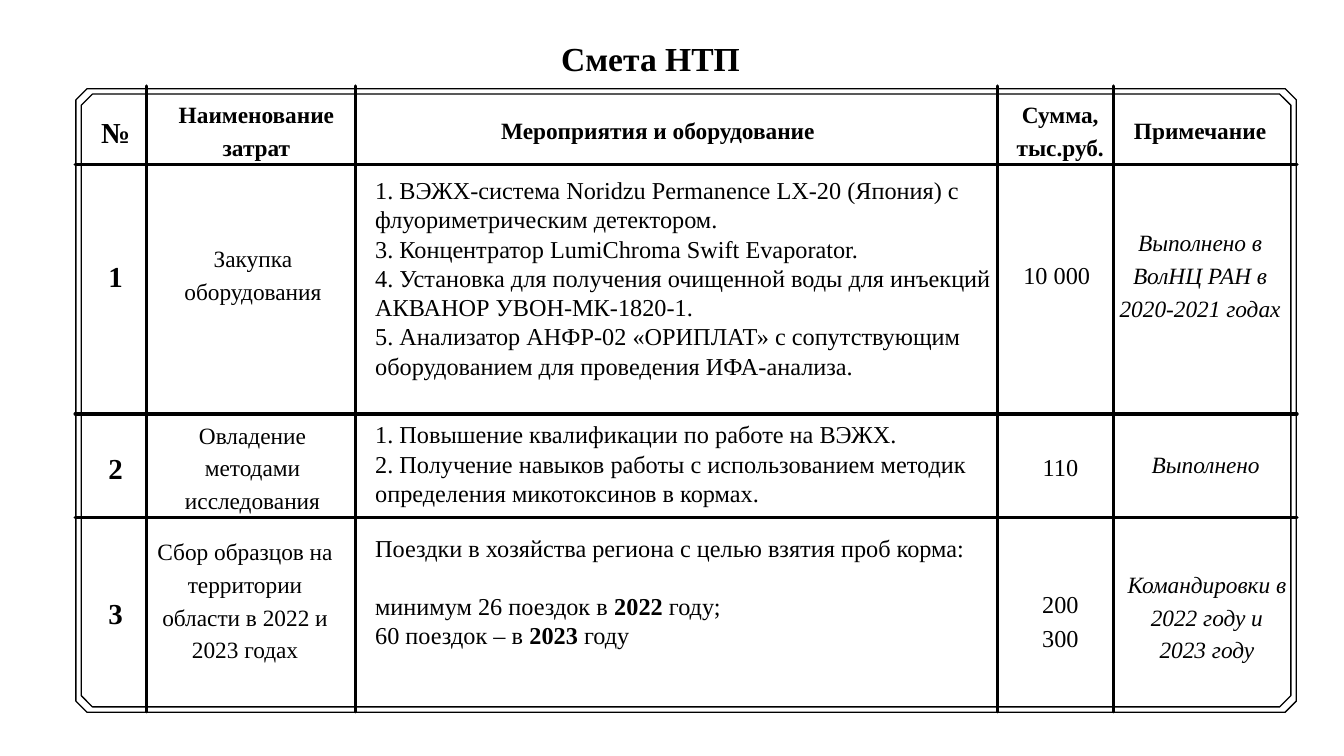
from dataclasses import dataclass
from itertools import pairwise

from lxml import etree
from pptx import Presentation
from pptx import util as u
from pptx.dml.color import RGBColor
from pptx.enum import shapes, text
from pptx.oxml.ns import qn

Pt = u.Pt


@dataclass(frozen=True)
class Theme:
    ink: str = "000000"
    font: str = "Times New Roman"
    title: float = 36
    number: float = 31
    label: float = 25
    body: float = 26
    rule: float = 3.75
    frame: float = 1.4
    plain_table: str = "{2D5ABB26-0587-4C30-8999-92F81FD0307C}"


THEME = Theme()
INK = RGBColor.from_string(THEME.ink)
CENTER, LEFT = text.PP_ALIGN.CENTER, text.PP_ALIGN.LEFT

# Kinds of text: font size, exact line spacing, alignment, bold, italic
STYLES = {
    "title": (THEME.title, 43.4, CENTER, True, False),
    "number": (THEME.number, 43.4, CENTER, True, False),
    "head": (THEME.label, 35, CENTER, True, False),
    "name": (THEME.label, 35, CENTER, False, False),
    "work": (THEME.body, 31.3, LEFT, False, False),
    "sum": (THEME.body, 36.4, CENTER, False, False),
    "note": (THEME.label, 35, CENTER, False, True),
}
BODY_STYLES = ("number", "name", "work", "sum", "note")
HEAD_STYLES = ("number",) + ("head",) * 4

COLUMN_EDGES = (80.6, 157, 381, 1068.5, 1193, 1389.6)
ROW_EDGES = (92.2, 176.4, 443.5, 554.4, 762.5)

# Each cell: paragraphs, then left, top and right insets.
# Text between ** marks is bold; a paragraph after "+" opens one line lower.
ROWS = [
    [
        (["№"], 10, 25, 0),
        (["Наименование затрат"], 14.4, 11, 3),
        (["Мероприятия и оборудование"], 0, 28, 40),
        (["Сумма, тыс.руб."], 14.4, 11, 4),
        (["Примечание"], 8, 28, 19),
    ],
    [
        (["1"], 10, 95, 0),
        (["Закупка оборудования"], 16, 80.6, 12),
        (["1. ВЭЖХ-система Noridzu Permanence LX-20 (Япония) с флуориметрическим детектором.",
          "3. Концентратор LumiChroma Swift Evaporator.",
          "4. Установка для получения очищенной воды для инъекций АКВАНОР УВОН-МК-1820-1.",
          "5. Анализатор АНФР-02 «ОРИПЛАТ» с сопутствующим оборудованием для проведения "
          "ИФА-анализа."], 21, 12, 2),
        (["10 000"], 3, 98, 0),
        (["Выполнено в ВолНЦ РАН в 2020-2021 годах"], 0, 64, 11),
    ],
    [
        (["2"], 10, 34, 0),
        (["Овладение методами исследования"], 20, 3, 17),
        (["1. Повышение квалификации по работе на ВЭЖХ.",
          "2. Получение навыков работы с использованием методик определения микотоксинов "
          "в кормах."], 21, 6.5, 2),
        (["110"], 11, 36, 0),
        (["Выполнено"], 8, 34, 7),
    ],
    [
        (["3"], 10, 78, 0),
        (["Сбор образцов на территории области в 2022 и 2023 годах"], 3.6, 17, 16.6),
        (["Поездки в хозяйства региона с целью взятия проб корма:",
          "+минимум 26 поездок в **2022** году;",
          "60 поездок – в **2023** году"], 21, 17, 19),
        (["200", "300"], 11, 72, 0),
        (["Командировки в 2022 году и", "2023 году"], 3.6, 52, 0),
    ],
]


def apply(target, values):
    for name, value in values.items():
        setattr(target, name, value)


def write(frame, paragraphs, style):
    size, spacing, align, bold, italic = STYLES[style]
    for index, content in enumerate(paragraphs):
        para = frame.add_paragraph() if index else frame.paragraphs[0]
        apply(para, {
            "alignment": align,
            "space_before": Pt(spacing if content.startswith("+") else 0),
            "space_after": Pt(0),
            "line_spacing": Pt(spacing),
        })
        for part, words in enumerate(content.removeprefix("+").split("**")):
            span = para.add_run()
            span.text = words
            apply(span.font, {"name": THEME.font, "size": Pt(size),
                              "bold": bold or part % 2 == 1, "italic": italic})
            span.font.color.rgb = INK


def add_title(page, left, top, width, height):
    title = page.shapes.title
    apply(title, {"left": Pt(left), "top": Pt(top), "width": Pt(width), "height": Pt(height)})
    apply(title.text_frame, {
        "margin_left": 0, "margin_right": 0, "margin_top": 0, "margin_bottom": 0,
        "word_wrap": True, "auto_size": text.MSO_AUTO_SIZE.NONE,
        "vertical_anchor": text.MSO_ANCHOR.TOP,
    })
    write(title.text_frame, ["Смета НТП"], "title")


def add_frame(page, left, top, width, height):
    """Double outline with cut corners."""
    for inset in (0.7, 6.5):
        outline = page.shapes.add_shape(
            shapes.MSO_SHAPE.OCTAGON, Pt(left + inset), Pt(top + inset),
            Pt(width - 2 * inset), Pt(height - 2 * inset))
        outline.adjustments[0] = 12 / (height - 2 * inset)
        outline.shadow.inherit = False
        outline.fill.background()
        outline.line.width = Pt(THEME.frame)
        outline.line.color.rgb = INK


def add_rule(page, x1, y1, x2, y2):
    rule = page.shapes.add_connector(
        shapes.MSO_CONNECTOR.STRAIGHT, Pt(x1), Pt(y1), Pt(x2), Pt(y2))
    rule.line.width = Pt(THEME.rule)
    rule.line.color.rgb = INK
    properties = rule._element.spPr
    properties.find(qn("a:ln")).set("cap", "rnd")
    etree.SubElement(properties, qn("a:effectLst"))


def add_rules(page, columns, rows):
    """Round-ended rules between rows and columns, overhanging the frame."""
    for y in rows[1:-1]:
        add_rule(page, columns[0], y, columns[-1], y)
    for x in columns[1:-1]:
        add_rule(page, x, rows[0], x, rows[-1])


def add_estimate(page, columns, rows):
    shape = page.shapes.add_table(
        len(rows) - 1, len(columns) - 1, Pt(columns[0]), Pt(rows[0]),
        Pt(columns[-1] - columns[0]), Pt(rows[-1] - rows[0]))
    table = shape.table
    apply(table, {"first_row": False, "horz_banding": False})
    next(shape._element.iter(qn("a:tableStyleId"))).text = THEME.plain_table
    for column, (start, end) in zip(table.columns, pairwise(columns)):
        column.width = Pt(end - start)
    for row, (start, end) in zip(table.rows, pairwise(rows)):
        row.height = Pt(end - start)

    for r, entries in enumerate(ROWS):
        styles = BODY_STYLES if r else HEAD_STYLES
        for c, (paragraphs, left, top, right) in enumerate(entries):
            cell = table.cell(r, c)
            apply(cell, {"margin_left": Pt(left), "margin_top": Pt(top),
                         "margin_right": Pt(right), "margin_bottom": 0,
                         "vertical_anchor": text.MSO_ANCHOR.TOP})
            cell.fill.background()
            write(cell.text_frame, paragraphs, styles[c])


def main():
    deck = Presentation()
    apply(deck, {"slide_width": Pt(1440), "slide_height": Pt(810)})
    page = deck.slides.add_slide(deck.slide_layouts.get_by_name("Title Only"))
    add_title(page, 588, 40.3, 218, 43.4)
    add_frame(page, 80.6, 94.3, 1309, 669.6)
    add_rules(page, COLUMN_EDGES, ROW_EDGES)
    add_estimate(page, COLUMN_EDGES, ROW_EDGES)
    deck.save("out.pptx")


if __name__ == "__main__":
    main()
